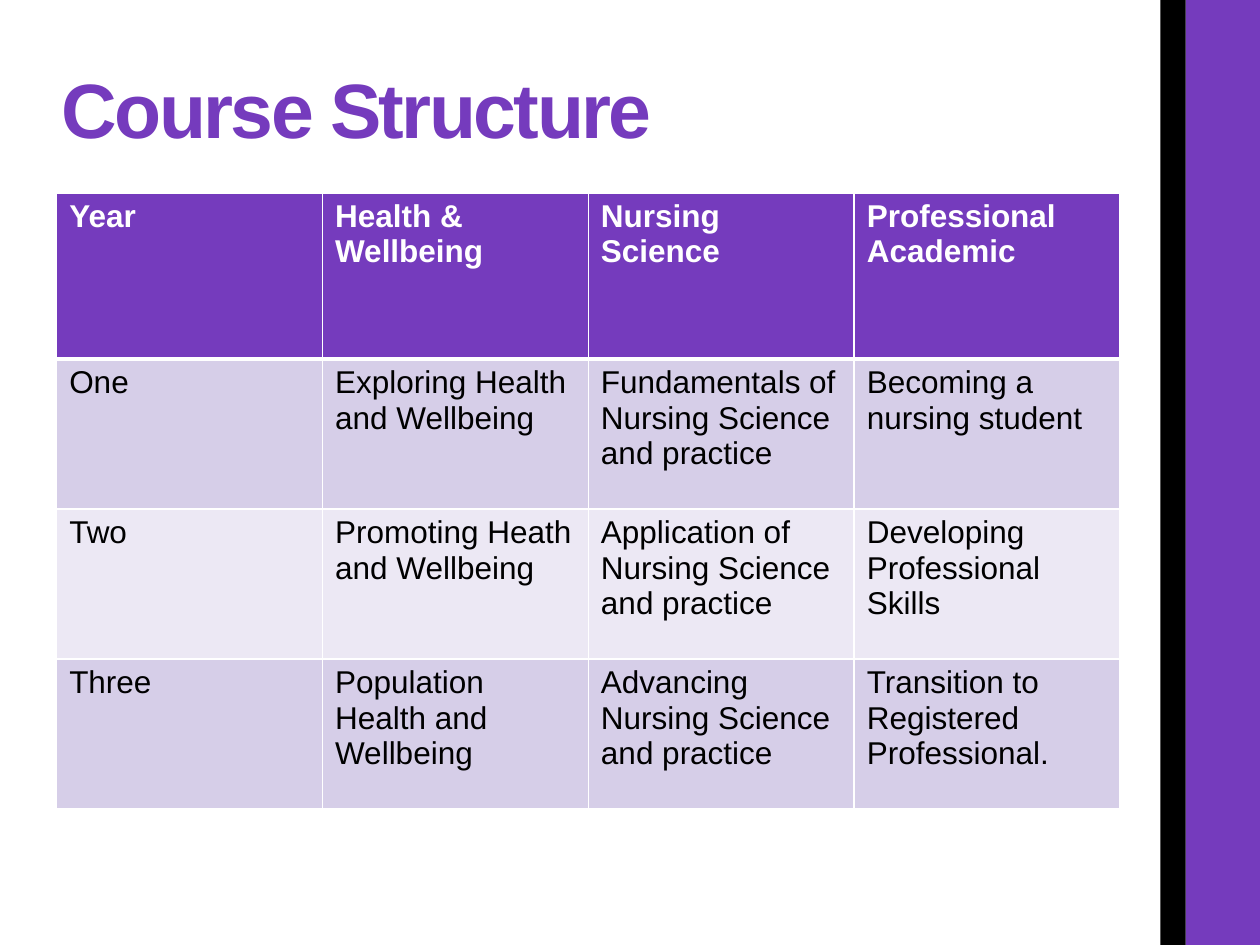
from typing import NamedTuple

from lxml.etree import SubElement
from pptx import Presentation
from pptx.dml.color import RGBColor
from pptx.enum.shapes import MSO_SHAPE as Preset
from pptx.enum.text import MSO_ANCHOR as Anchor, PP_ALIGN as Align
from pptx.oxml.ns import qn
from pptx.util import Inches, Pt

PURPLE = RGBColor(0x75, 0x3B, 0xBD)
LILAC = RGBColor(0xD6, 0xCE, 0xE8)
PALE_LILAC = RGBColor(0xEC, 0xE8, 0xF4)
BLACK = RGBColor(0, 0, 0)
WHITE = RGBColor(255, 255, 255)

PAGE_WIDTH, PAGE_HEIGHT = Inches(10), Inches(7.5)
COLUMN_WIDTH = Inches(2.11)
HEADER_HEIGHT, YEAR_HEIGHT = Inches(1.32), Inches(1.19)

COURSE = [
    ("Year", "Health & Wellbeing", "Nursing Science", "Professional Academic"),
    ("One", "Exploring Health and Wellbeing",
     "Fundamentals of Nursing Science and practice", "Becoming a nursing student"),
    ("Two", "Promoting Heath and Wellbeing",
     "Application of Nursing Science and practice", "Developing Professional Skills"),
    ("Three", "Population Health and Wellbeing",
     "Advancing Nursing Science and practice", "Transition to Registered Professional."),
]


class Band(NamedTuple):
    """A full-height side band; left and width are shares of the page width."""
    left: float
    width: float
    color: RGBColor


class RowStyle(NamedTuple):
    fill: RGBColor
    text: RGBColor
    bold: bool
    top_line: int
    bottom_line: int


BANDS = [Band(0.941, 0.059, PURPLE), Band(0.921, 0.02, BLACK)]
ROW_STYLES = [
    RowStyle(PURPLE, WHITE, True, 1, 3),
    RowStyle(LILAC, BLACK, False, 3, 1),
    RowStyle(PALE_LILAC, BLACK, False, 1, 1),
    RowStyle(LILAC, BLACK, False, 1, 1),
]


def format_font(font, color: RGBColor, **values) -> None:
    for name, value in {"name": "Arial", **values}.items():
        setattr(font, name, value)
    font.color.rgb = color


def draw_band(page, band: Band) -> None:
    shape = page.shapes.add_shape(
        Preset.RECTANGLE, int(PAGE_WIDTH * band.left), 0,
        int(PAGE_WIDTH * band.width), PAGE_HEIGHT)
    shape.shadow.inherit = False
    shape.fill.solid()
    shape.fill.fore_color.rgb = band.color
    shape.line.fill.background()


def draw_borders(cell, style: RowStyle) -> None:
    properties = cell._tc.get_or_add_tcPr()
    widths = {"lnL": 1, "lnR": 1, "lnT": style.top_line, "lnB": style.bottom_line}
    for side, width in widths.items():
        line = SubElement(properties, qn(f"a:{side}"), w=str(Pt(width)))
        fill = SubElement(line, qn("a:solidFill"))
        SubElement(fill, qn("a:srgbClr"), val=str(WHITE))


def fill_cell(cell, text: str, style: RowStyle) -> None:
    draw_borders(cell, style)
    cell.fill.solid()
    cell.fill.fore_color.rgb = style.fill
    cell.text = text
    span = cell.text_frame.paragraphs[0].runs[0]
    format_font(span.font, style.text, size=Pt(18), bold=style.bold)


def draw_course_table(page) -> None:
    heights = [HEADER_HEIGHT] + [YEAR_HEIGHT] * (len(COURSE) - 1)
    columns = len(COURSE[0])
    table = page.shapes.add_table(
        len(COURSE), columns, Inches(0.45), Inches(1.53),
        COLUMN_WIDTH * columns, sum(heights)).table
    for column in table.columns:
        column.width = COLUMN_WIDTH
    for row, height, texts, style in zip(table.rows, heights, COURSE, ROW_STYLES):
        row.height = height
        for cell, text in zip(row.cells, texts):
            fill_cell(cell, text, style)


def write_title(page, text: str) -> None:
    title = page.shapes.title
    place = {"left": 0.39, "top": 0.4, "width": 8.41, "height": 0.88}
    for name, value in place.items():
        setattr(title, name, Inches(value))
    frame = title.text_frame
    frame.text = text
    frame.vertical_anchor = Anchor.BOTTOM
    para = frame.paragraphs[0]
    para.alignment = Align.LEFT
    para.line_spacing = 0.9
    span = para.runs[0]
    format_font(span.font, PURPLE, size=Pt(44), bold=True)
    span._r.get_or_add_rPr().set("spc", "-150")


def main() -> None:
    deck = Presentation()
    deck.slide_width, deck.slide_height = PAGE_WIDTH, PAGE_HEIGHT
    page = deck.slides.add_slide(deck.slide_layouts.get_by_name("Title Only"))
    for band in BANDS:
        draw_band(page, band)
    draw_course_table(page)
    write_title(page, "Course Structure")
    deck.save("out.pptx")


if __name__ == "__main__":
    main()
